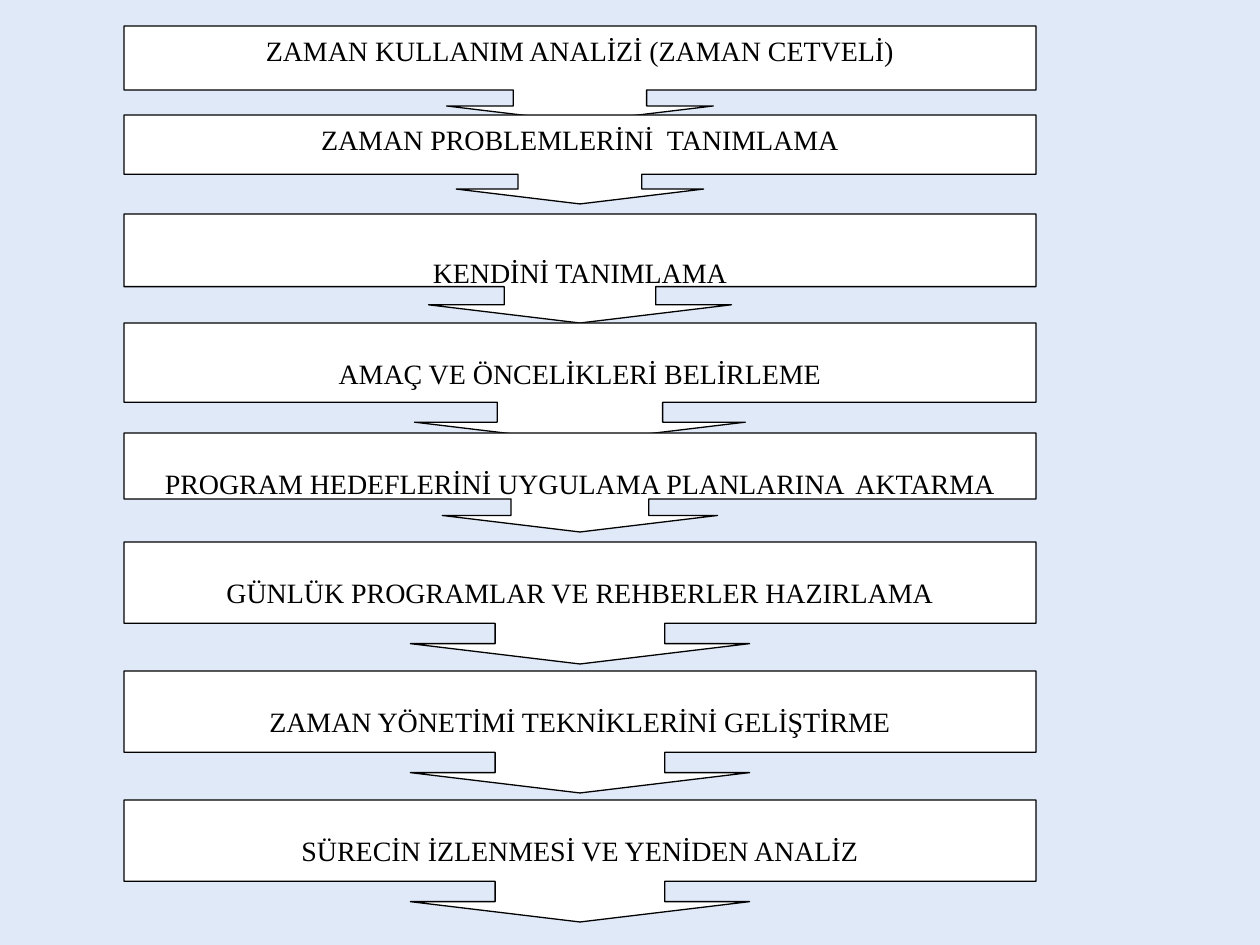
import pptx
import pptx.util
from dataclasses import dataclass
from pptx.dml.color import RGBColor
from pptx.enum.shapes import MSO_SHAPE
from pptx.enum.text import MSO_ANCHOR, PP_ALIGN

EMU_PER_PX = 914400 // 126


def px(length):
    return pptx.util.Emu(length * EMU_PER_PX)


@dataclass(frozen=True)
class Theme:
    background: str = "DFE9F7"
    fill: str = "FFFFFF"
    ink: str = "000000"
    font: str = "Times New Roman"
    text_size: int = 16
    line_width: float = 0.75


def write_text(box, text, *, font, size, color, top, align=PP_ALIGN.CENTER):
    """Put one formatted paragraph in a box, starting top px below its edge."""
    frame = box.text_frame
    frame.word_wrap = True
    frame.vertical_anchor = MSO_ANCHOR.TOP
    frame.margin_top, frame.margin_bottom = px(top), 0
    para = frame.paragraphs[0]
    para.alignment = align
    span = para.add_run()
    span.text = text
    span.font.name = font
    span.font.size = pptx.util.Pt(size)
    span.font.color.rgb = RGBColor.from_string(color)


class PageBuilder:
    def __init__(self, page, theme):
        self.page = page
        self.theme = theme

    def background(self):
        fill = self.page.background.fill
        fill.solid()
        fill.fore_color.rgb = RGBColor.from_string(self.theme.background)

    def step(self, text, left, top, width, height, text_top):
        """Add a process step: a box with an arrow to the next one."""
        theme = self.theme
        box = self.page.shapes.add_shape(
            MSO_SHAPE.DOWN_ARROW_CALLOUT, px(left), px(top), px(width), px(height))
        # Shaft width, head half-width, head height, box share
        for index, value in enumerate((1.39, 1.39, 0.16667, 0.66667)):
            box.adjustments[index] = value
        box.shadow.inherit = False
        box.fill.solid()
        box.fill.fore_color.rgb = RGBColor.from_string(theme.fill)
        box.line.color.rgb = RGBColor.from_string(theme.ink)
        box.line.width = pptx.util.Pt(theme.line_width)
        write_text(box, text, font=theme.font, size=theme.text_size,
                   color=theme.ink, top=text_top)


# Steps: text, top, height, text offset (px)
STEPS = [
    ("ZAMAN KULLANIM ANALİZİ (ZAMAN CETVELİ)", 26, 96, 8),
    ("ZAMAN PROBLEMLERİNİ  TANIMLAMA", 115, 89, 8),
    ("KENDİNİ TANIMLAMA", 214, 109, 42),
    ("AMAÇ VE ÖNCELİKLERİ BELİRLEME", 323, 119, 34),
    ("PROGRAM HEDEFLERİNİ UYGULAMA PLANLARINA  AKTARMA", 433, 99, 34),
    ("GÜNLÜK PROGRAMLAR VE REHBERLER HAZIRLAMA", 542, 122, 34),
    ("ZAMAN YÖNETİMİ TEKNİKLERİNİ GELİŞTİRME", 671, 122, 34),
    ("SÜRECİN İZLENMESİ VE YENİDEN ANALİZ", 800, 122, 34),
]
STEP_LEFT, STEP_WIDTH = 124, 912


def main():
    deck = pptx.Presentation()
    deck.slide_width, deck.slide_height = px(1260), px(945)
    page = deck.slides.add_slide(deck.slide_layouts[6])
    builder = PageBuilder(page, Theme())
    builder.background()

    # Column of steps, each arrow partly covered by the next box
    for text, top, height, text_top in STEPS:
        builder.step(text, STEP_LEFT, top, STEP_WIDTH, height, text_top)

    deck.save("out.pptx")


if __name__ == "__main__":
    main()
